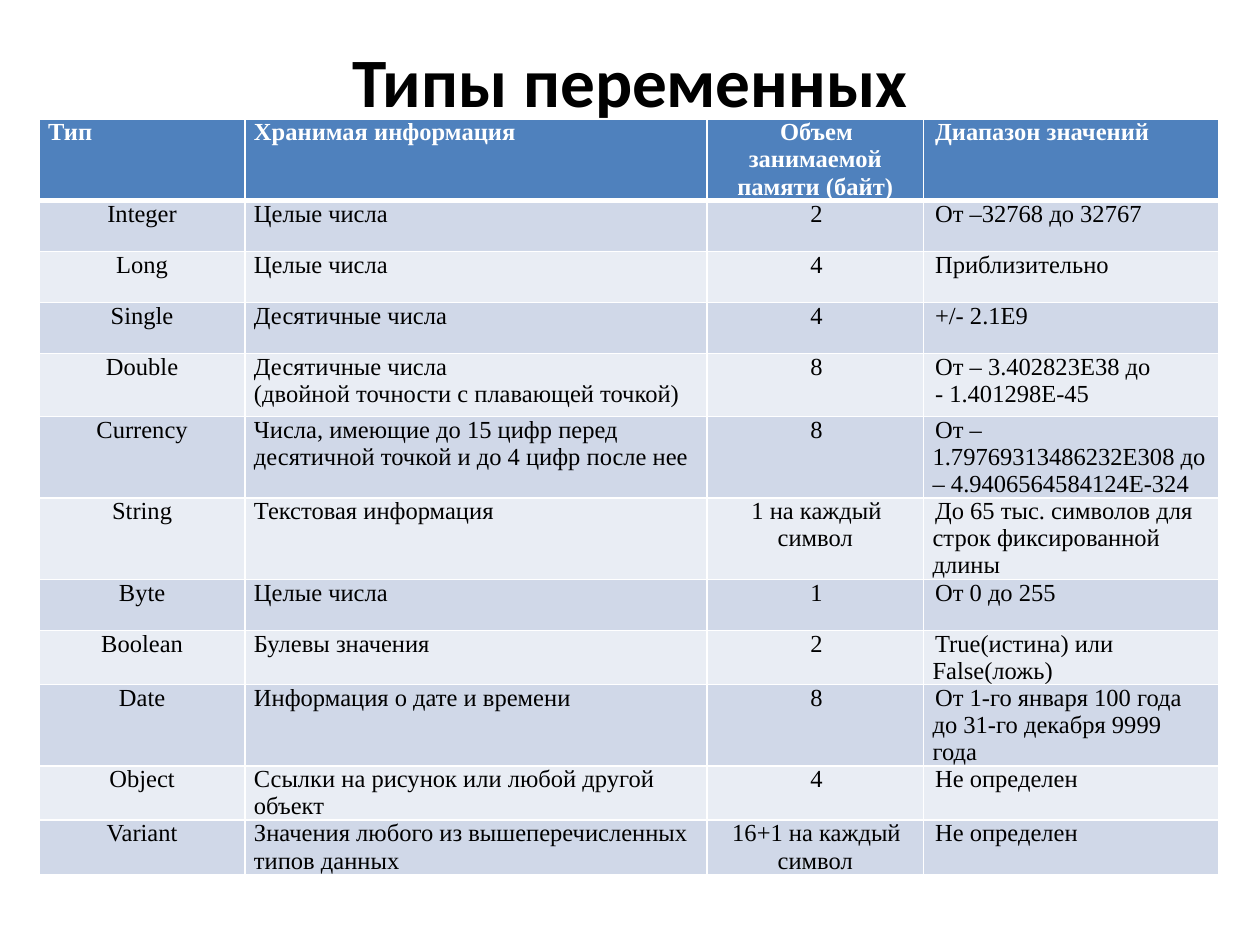
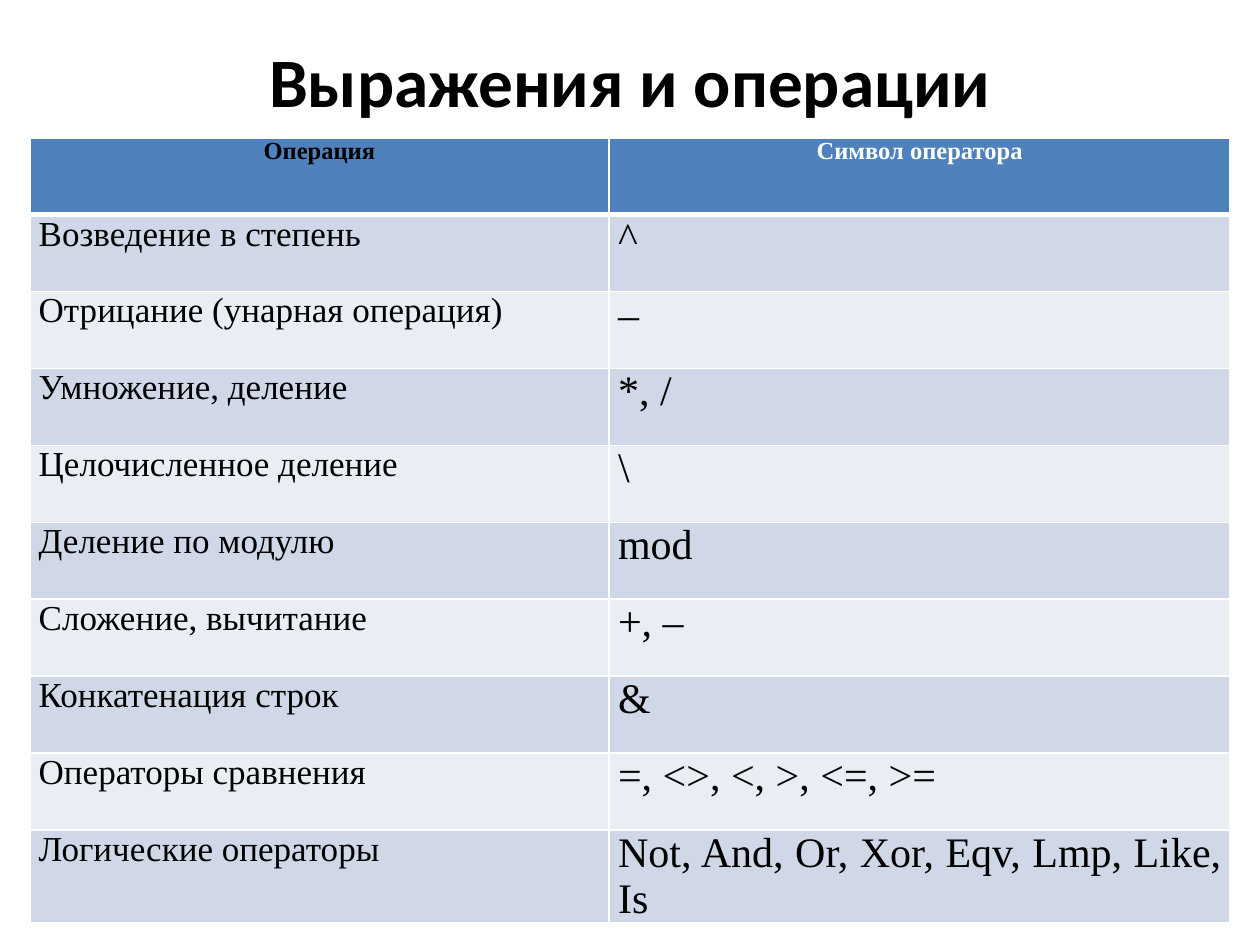
from lxml.etree import SubElement
from pptx import Presentation
from pptx.dml.color import RGBColor
from pptx.enum.text import MSO_ANCHOR, MSO_AUTO_SIZE, PP_ALIGN
from pptx.oxml.ns import qn
from pptx.util import Cm, Pt

WHITE, BLACK, BLUE = "FFFFFF", "000000", "4F81BD"
BANDS = ("D0D8E8", "E9EDF4")
LEFT, MID, JUST = PP_ALIGN.LEFT, PP_ALIGN.CENTER, PP_ALIGN.JUSTIFY

TYPES = {
    "title": "Типы переменных",
    "rows": [
        ("Тип", "Хранимая информация", "Объем занимаемой памяти (байт)", "Диапазон значений"),
        ("Integer", "Целые числа", "2", "От –32768 до 32767"),
        ("Long", "Целые числа", "4", "Приблизительно"),
        ("Single", "Десятичные числа", "4", "+/- 2.1Е9"),
        ("Double", "Десятичные числа\n(двойной точности с плавающей точкой)", "8",
         "От – 3.402823Е38 до\n- 1.401298Е-45"),
        ("Currency", "Числа, имеющие до 15 цифр перед десятичной точкой и до 4 цифр после нее", "8",
         "От –1.79769313486232Е308 до – 4.9406564584124Е-324"),
        ("String", "Текстовая информация", "1 на каждый символ",
         "До 65 тыс. символов для строк фиксированной длины"),
        ("Byte", "Целые числа", "1", "От 0 до 255"),
        ("Boolean", "Булевы значения", "2", "True(истина) или False(ложь)"),
        ("Date", "Информация о дате и времени", "8",
         "От 1-го января 100 года до 31-го декабря 9999 года"),
        ("Object", "Ссылки на рисунок или любой другой объект", "4", "Не определен"),
        ("Variant", "Значения любого из вышеперечисленных типов данных",
         "16+1 на каждый символ", "Не определен"),
    ],
    "at": (0.79, 2.4), "height": 16.08,
    "row": 1.03, "tall": {4: 1.27},
    # width, header alignment, header colour, body alignment, body size, first-line indent
    "cols": [
        (4.15, LEFT, WHITE, MID, 14, 0),
        (9.31, LEFT, WHITE, LEFT, 14, 0),
        (4.37, MID, WHITE, MID, 14, 0.05),
        (5.95, LEFT, WHITE, LEFT, 14, 0.05),
    ],
}

OPS = {
    "title": "Выражения и операции",
    "rows": [
        ("Операция", "Символ оператора"),
        ("Возведение в степень", "^"),
        ("Отрицание (унарная операция)", "–"),
        ("Умножение, деление", "*, /"),
        ("Целочисленное деление", "\\"),
        ("Деление по модулю", "mod"),
        ("Сложение, вычитание", "+, –"),
        ("Конкатенация строк", "&"),
        ("Операторы сравнения", "=, <>, <, >, <=, >="),
        ("Логические операторы", "Not, And, Or, Xor, Eqv, Lmp, Like, Is"),
    ],
    "at": (0.6, 2.78), "height": 15.95,
    "row": 1.55, "tall": {},
    "cols": [
        (11.68, MID, BLACK, JUST, 20, 0),
        (12.52, MID, WHITE, JUST, 24, 0),
    ],
}


def style(par, name, size, color, bold, align):
    font = par.font
    font.name, font.size, font.bold = name, Pt(size), bold
    font.color.rgb = RGBColor.from_string(color)
    par.alignment = align


def add_title(slide, text):
    box = slide.shapes.title
    box.left, box.top, box.width, box.height = Cm(1.27), Cm(0.76), Cm(22.86), Cm(3.18)
    frame = box.text_frame
    frame.text = text
    frame.auto_size = MSO_AUTO_SIZE.NONE
    frame.vertical_anchor = MSO_ANCHOR.TOP
    frame.margin_top = 0
    style(frame.paragraphs[0], "Calibri", 39.6, BLACK, True, MID)


def add_edges(cell, row):
    """Draw white cell borders, with a thick rule below the header."""
    props = cell._tc.get_or_add_tcPr()
    thick = {"T": row == 1, "B": row == 0}
    for side in "LRTB":
        line = SubElement(props, qn(f"a:ln{side}"), w=str(Pt(3 if thick.get(side) else 1)))
        fill = SubElement(line, qn("a:solidFill"))
        SubElement(fill, qn("a:srgbClr"), val=WHITE)


def fill_cell(cell, text, row, col):
    _, top, tint, align, size, indent = col
    head = row == 0
    cell.text = text
    cell.margin_left = cell.margin_right = Cm(0.18)
    cell.margin_top = cell.margin_bottom = 0
    add_edges(cell, row)
    cell.fill.solid()
    cell.fill.fore_color.rgb = RGBColor.from_string(BLUE if head else BANDS[(row - 1) % 2])
    for par in cell.text_frame.paragraphs:
        if head:
            style(par, "Times New Roman", 14, tint, True, top)
        else:
            style(par, "Times New Roman", size, BLACK, False, align)
        if indent:
            par._p.get_or_add_pPr().set("indent", str(Cm(indent)))


def add_grid(slide, data):
    rows, cols = data["rows"], data["cols"]
    left, top = map(Cm, data["at"])
    width = Cm(sum(col[0] for col in cols))
    frame = slide.shapes.add_table(len(rows), len(cols), left, top, width, Cm(data["height"]))
    table = frame.table
    for c, col in enumerate(cols):
        table.columns[c].width = Cm(col[0])
    for r, row in enumerate(rows):
        table.rows[r].height = Cm(data["tall"].get(r, data["row"]))
        for c, text in enumerate(row):
            fill_cell(table.cell(r, c), text, r, cols[c])
    frame.height = Cm(data["height"])


def main():
    deck = Presentation()
    deck.slide_width, deck.slide_height = Cm(25.4), Cm(19.05)
    for data in (TYPES, OPS):
        slide = deck.slides.add_slide(deck.slide_layouts[5])
        add_title(slide, data["title"])
        add_grid(slide, data)
    deck.save("out.pptx")


if __name__ == "__main__":
    main()
